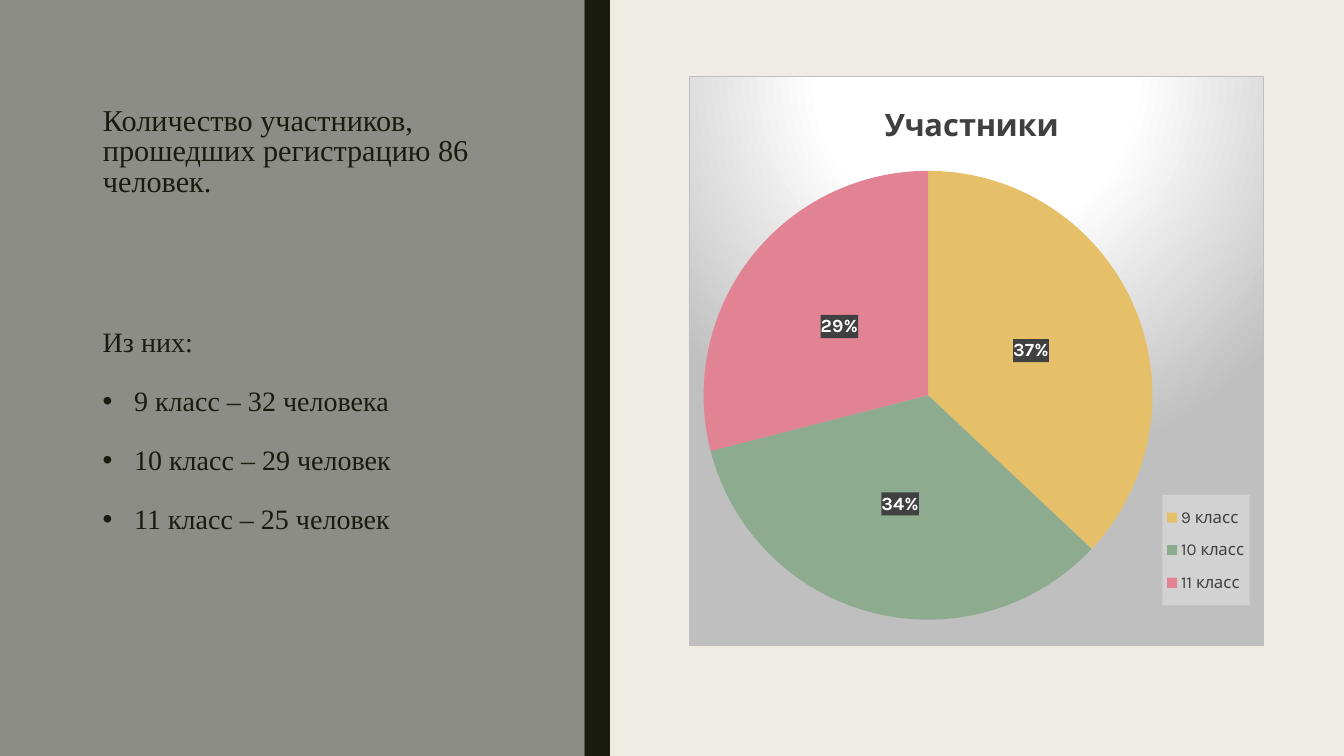
from lxml.etree import SubElement
from pptx import Presentation
from pptx.chart.data import CategoryChartData
from pptx.dml.color import RGBColor
from pptx.enum.chart import XL_CHART_TYPE, XL_LABEL_POSITION, XL_LEGEND_POSITION
from pptx.enum.shapes import MSO_SHAPE
from pptx.enum.text import MSO_ANCHOR, MSO_AUTO_SIZE, PP_ALIGN
from pptx.oxml import parse_xml
from pptx.oxml.ns import nsdecls, qn
from pptx.util import Cm, Pt

HEADLINE = "Количество участников, прошедших регистрацию 86 человек."
INTRO = "Из них:"
GRADES = ["9 класс – 32 человека", "10 класс – 29 человек", "11 класс – 25 человек"]
CHART_TITLE = "Участники"
SHARES = [("9 класс", 37, "E6C069"), ("10 класс", 34, "8DAB8E"), ("11 класс", 29, "E28394")]
INK, CHART_INK = "191B0E", "404040"
SERIF, SANS = "Times New Roman", "Karla"
WIDTH, HEIGHT = Cm(33.87), Cm(19.05)
PANEL_WIDTH, STRIPE_WIDTH = Cm(14.73), Cm(0.64)
TEXT_LEFT, TEXT_WIDTH = Cm(2.34), Cm(10.92)
INDENT = Cm(0.79)


def color(code):
    return RGBColor.from_string(code)


def style_font(font, size, code, name, bold=False):
    font.size, font.name, font.bold = Pt(size), name, bold
    font.color.rgb = color(code)


def write(paragraph, text, size=20, code=INK, name=SERIF, bold=False,
          spacing=None, after=0, bullet=False):
    run = paragraph.add_run()
    run.text = text
    style_font(run.font, size, code, name, bold)
    paragraph.alignment = PP_ALIGN.LEFT
    paragraph.space_before, paragraph.space_after = Pt(0), Pt(after)
    paragraph.line_spacing = spacing
    if bullet:
        properties = paragraph._p.get_or_add_pPr()
        properties.set("marL", str(INDENT))
        properties.set("indent", str(-INDENT))
        SubElement(properties, qn("a:buFont")).set("typeface", "Arial")
        SubElement(properties, qn("a:buChar")).set("char", "•")


def add_band(shapes, left, width, code):
    band = shapes.add_shape(MSO_SHAPE.RECTANGLE, left, 0, width, HEIGHT)
    band.shadow.inherit = False
    band.fill.solid()
    band.fill.fore_color.rgb = color(code)
    band.line.fill.background()
    return band


def place(part, left, top, width=None, height=None, after=None):
    for old in part.findall(qn("c:layout")):
        part.remove(old)
    layout = parse_xml(f"<c:layout {nsdecls('c')}><c:manualLayout/></c:layout>")
    settings = [("xMode", "edge"), ("yMode", "edge"), ("x", left), ("y", top)]
    if width:
        settings.insert(0, ("layoutTarget", "inner"))
        settings += [("w", width), ("h", height)]
    for tag, value in settings:
        if tag != "layoutTarget" or part.tag == qn("c:plotArea"):
            SubElement(layout[0], qn(f"c:{tag}")).set("val", str(value))
    if after:
        part.find(qn(after)).addnext(layout)
    else:
        part.insert(0, layout)


def chart_fill(content):
    return parse_xml(f"<c:spPr {nsdecls('c', 'a')}>{content}</c:spPr>")


def solid(code, opacity):
    return (f'<a:solidFill><a:srgbClr val="{code}"><a:alpha val="{opacity * 1000}"/>'
            '</a:srgbClr></a:solidFill>')


def add_shares_chart(shapes):
    shares = CategoryChartData()
    shares.categories = [grade for grade, _, _ in SHARES]
    shares.add_series(CHART_TITLE, [share for _, share, _ in SHARES])
    chart = shapes.add_chart(XL_CHART_TYPE.PIE, Cm(17.37), Cm(1.91),
                             Cm(14.48), Cm(14.38), shares).chart
    style_font(chart.font, 10, "000000", SANS)
    chart.has_title = True
    write(chart.chart_title.text_frame.paragraphs[0], CHART_TITLE,
          size=22, code=CHART_INK, name=SANS, bold=True)

    chart.has_legend = True
    chart.legend.position = XL_LEGEND_POSITION.RIGHT
    chart.legend.include_in_layout = False
    style_font(chart.legend.font, 12, CHART_INK, SANS)

    plot = chart.plots[0]
    plot.vary_by_categories = True
    pie = plot.series[0]
    for index, (_, _, code) in enumerate(SHARES):
        slice_fill = pie.points[index].format.fill
        slice_fill.solid()
        slice_fill.fore_color.rgb = color(code)
    labels = pie.data_labels
    labels.show_value, labels.show_percentage = False, True
    labels.position = XL_LABEL_POSITION.CENTER
    style_font(labels.font, 13.3, "FFFFFF", SANS, True)

    root = chart.element
    body = root.find(qn("c:chart"))
    legend = body.find(qn("c:legend"))
    place(body.find(qn("c:title")), 0.33, 0.04, after="c:tx")
    place(body.find(qn("c:plotArea")), 0.024, 0.166, 0.783, 0.788)
    place(legend, 0.824, 0.735, 0.152, 0.194, after="c:legendPos")
    legend.find(qn("c:overlay")).addnext(chart_fill(solid("F2F2F2", 39)))
    label_text = root.find(f".//{qn('c:dLbls')}/{qn('c:txPr')}")
    label_text.addprevious(chart_fill(solid("404040", 90)))
    stops = "".join(f'<a:gs pos="{stop * 1000}"><a:srgbClr val="{code}"/></a:gs>'
                    for stop, code in [(0, "FFFFFF"), (39, "FFFFFF"), (100, "BFBFBF")])
    body.addnext(chart_fill(
        f'<a:gradFill><a:gsLst>{stops}</a:gsLst><a:path path="circle">'
        '<a:fillToRect l="50000" t="-80000" r="50000" b="180000"/></a:path></a:gradFill>'
        '<a:ln w="9525"><a:solidFill><a:srgbClr val="BFBFBF"/></a:solidFill></a:ln>'))


def main():
    deck = Presentation()
    deck.slide_width, deck.slide_height = WIDTH, HEIGHT
    slide = deck.slides.add_slide(deck.slide_layouts[5])
    slide.background.fill.solid()
    slide.background.fill.fore_color.rgb = color("EFEDE3")
    headline = slide.shapes.title
    for left, width, code in [(0, PANEL_WIDTH, "8C8D86"), (PANEL_WIDTH, STRIPE_WIDTH, INK)]:
        headline.element.addprevious(add_band(slide.shapes, left, width, code).element)

    headline.left, headline.top = TEXT_LEFT, Cm(2.57)
    headline.width, headline.height = TEXT_WIDTH, Cm(2.54)
    headline.text_frame.word_wrap = True
    headline.text_frame.auto_size = MSO_AUTO_SIZE.NONE
    headline.text_frame.vertical_anchor = MSO_ANCHOR.TOP
    write(headline.text_frame.paragraphs[0], HEADLINE, size=21.6, spacing=0.84)

    add_shares_chart(slide.shapes)

    breakdown = slide.shapes.add_textbox(TEXT_LEFT, Cm(7.95), TEXT_WIDTH, Cm(10.59)).text_frame
    breakdown.word_wrap = True
    write(breakdown.paragraphs[0], INTRO, spacing=1.13, after=15)
    for grade in GRADES:
        write(breakdown.add_paragraph(), grade, spacing=1.13, after=15, bullet=True)
    deck.save("out.pptx")


if __name__ == "__main__":
    main()
